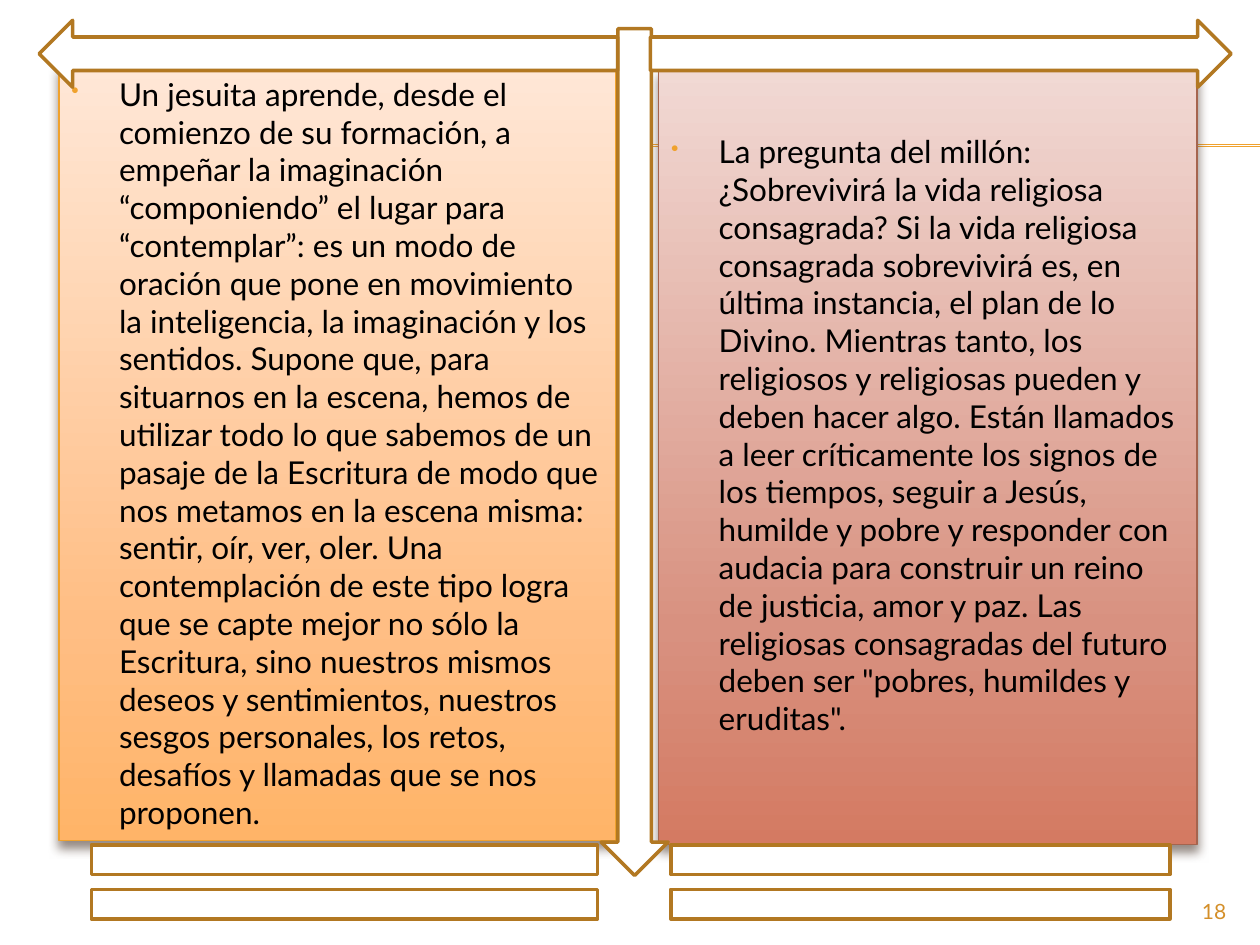
from copy import deepcopy

from lxml.etree import SubElement
from pptx import Presentation
from pptx.dml.color import RGBColor
from pptx.enum.shapes import MSO_CONNECTOR, MSO_SHAPE
from pptx.enum.text import MSO_ANCHOR, PP_ALIGN
from pptx.oxml.ns import qn
from pptx.util import Cm, Pt

JESUIT_TEXT = (
    "Un jesuita aprende, desde el comienzo de su formación, a empeñar la "
    "imaginación “componiendo” el lugar para “contemplar”: es un modo de "
    "oración que pone en movimiento la inteligencia, la imaginación y los "
    "sentidos. Supone que, para situarnos en la escena, hemos de utilizar "
    "todo lo que sabemos de un pasaje de la Escritura de modo que nos metamos "
    "en la escena misma: sentir, oír, ver, oler. Una contemplación de este "
    "tipo logra que se capte mejor no sólo la Escritura, sino nuestros mismos "
    "deseos y sentimientos, nuestros sesgos personales, los retos, desafíos y "
    "llamadas que se nos proponen."
)
QUESTION_TEXT = (
    "La pregunta del millón: ¿Sobrevivirá la vida religiosa consagrada? Si la "
    "vida religiosa consagrada sobrevivirá es, en última instancia, el plan de "
    "lo Divino. Mientras tanto, los religiosos y religiosas pueden y deben "
    "hacer algo. Están llamados a leer críticamente los signos de los tiempos, "
    "seguir a Jesús, humilde y pobre y responder con audacia para construir un "
    "reino de justicia, amor y paz. Las religiosas consagradas del futuro "
    'deben ser "pobres, humildes y eruditas".'
)


def rgb(code):
    return RGBColor.from_string(code)


def add_xml(parent, tag, **attributes):
    return SubElement(parent, qn(tag), {key: str(value) for key, value in attributes.items()})


def apply(target, values):
    for key, value in values.items():
        setattr(target, key, value)


class SlideBuilder:
    """Holds the style and the current slide, and adds each kind of element."""

    font = "Lato"
    gold, brown, shade = "F0A22E", "B27822", "4E3B30"

    def __init__(self, slide):
        self.slide = slide

    def rule(self, left, right, y):
        rule = self.slide.shapes.add_connector(
            MSO_CONNECTOR.STRAIGHT, Cm(left), Cm(y), Cm(right), Cm(y))
        rule.line.color.rgb = rgb(self.gold)
        rule.line.width = Pt(0.75)
        add_xml(rule.element.spPr, "a:effectLst")

    def outlined(self, kind, box, line, width):
        shape = self.slide.shapes.add_shape(kind, *map(Cm, box))
        shape.shadow.inherit = False
        shape.line.color.rgb = rgb(line)
        shape.line.width = Pt(width)
        return shape

    def symbol(self, kind, box):
        symbol = self.outlined(kind, box, self.brown, 2)
        symbol.fill.solid()
        symbol.fill.fore_color.rgb = rgb("FFFFFF")

    def panel(self, box, text, colors, line, bottom=0.13):
        panel = self.outlined(MSO_SHAPE.RECTANGLE, box, line, 0.79)
        self.gradient(panel.fill, colors)
        self.shadow(panel)
        apply(panel.text_frame, {"word_wrap": True, "vertical_anchor": MSO_ANCHOR.MIDDLE,
                                 "margin_bottom": Cm(bottom)})
        paragraph = self.wording(panel.text_frame, text, 18, "000000", PP_ALIGN.LEFT)
        paragraph.space_before = Pt(4)
        self.bullet(paragraph)

    def gradient(self, fill, colors):
        fill.gradient()
        fill.gradient_angle = 270
        first = fill.gradient_stops[0]._gs
        first.addnext(deepcopy(first))
        for stop, position, color in zip(fill.gradient_stops, (0, 0.72, 1), colors):
            stop.position = position
            stop.color.rgb = rgb(color)

    def shadow(self, shape):
        effects = shape.element.spPr.find(qn("a:effectLst"))
        outer = add_xml(effects, "a:outerShdw", blurRad=Pt(6), dist=Pt(4),
                        dir=5400000, rotWithShape=0)
        color = add_xml(outer, "a:srgbClr", val=self.shade)
        add_xml(color, "a:alpha", val=60000)

    def bullet(self, paragraph):
        properties = paragraph._p.get_or_add_pPr()
        properties.set("marL", str(Cm(0.96)))
        properties.set("indent", str(-Cm(0.96)))
        add_xml(add_xml(properties, "a:buClr"), "a:srgbClr", val=self.gold)
        add_xml(properties, "a:buSzPct", val=70000)
        add_xml(properties, "a:buChar", char="•")

    def wording(self, frame, text, size, color, alignment):
        paragraph = frame.paragraphs[0]
        paragraph.alignment = alignment
        run = paragraph.add_run()
        run.text = text
        apply(run.font, {"name": self.font, "size": Pt(size)})
        run.font.color.rgb = rgb(color)
        return paragraph

    def page_number(self, box, number):
        frame = self.slide.shapes.add_textbox(*map(Cm, box)).text_frame
        frame.word_wrap = True
        self.wording(frame, number, 12, "D48F29", PP_ALIGN.RIGHT)


def main():
    deck = Presentation()
    apply(deck, {"slide_width": Cm(25.4), "slide_height": Cm(19.05)})
    builder = SlideBuilder(deck.slides.add_slide(deck.slide_layouts[6]))
    for y in (2.92, 2.95):
        builder.rule(1.42, 25.4, y)
    builder.panel((1.19, 1.32, 11.23, 15.62), JESUIT_TEXT,
                  ("FFE7D7", "FFBE84", "FFB468"), builder.gold)
    builder.panel((13.28, 1.4, 10.85, 15.62), QUESTION_TEXT,
                  ("F1D9D4", "D89180", "D47A62"), "A5644E", bottom=1.02)
    for kind, box in (
        (MSO_SHAPE.DOWN_ARROW, (12.12, 0.58, 1.35, 17.07)),
        (MSO_SHAPE.RIGHT_ARROW, (13.11, 0.41, 11.71, 1.35)),
        (MSO_SHAPE.LEFT_ARROW, (0.79, 0.41, 11.66, 1.35)),
        (MSO_SHAPE.MATH_EQUAL, (0, 16.51, 13.89, 2.54)),
        (MSO_SHAPE.MATH_EQUAL, (11.71, 16.51, 13.69, 2.54)),
    ):
        builder.symbol(kind, box)
    builder.page_number((22.86, 17.98, 2.11, 0.69), "18")
    deck.save("out.pptx")


if __name__ == "__main__":
    main()
